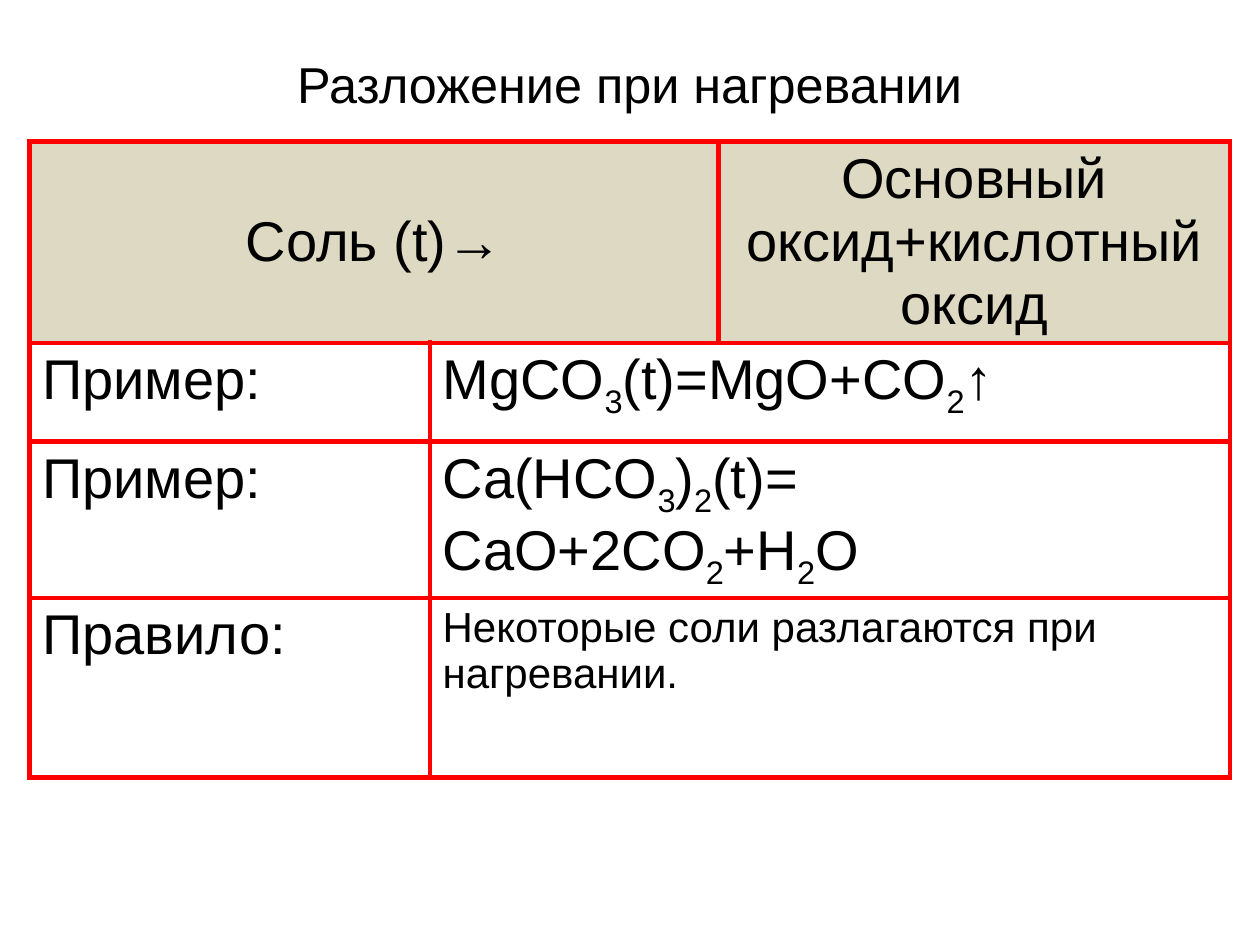
from pptx import Presentation
from pptx.dml.color import RGBColor
from pptx.enum.text import MSO_ANCHOR as Anchor, MSO_AUTO_SIZE as AutoSize, PP_ALIGN as Align
from pptx.oxml.ns import qn
from pptx.util import Pt
from lxml.etree import SubElement

BLACK, RED, BEIGE = "000000", "FF0000", "DDD9C3"
COLUMN_WIDTHS = [228.75, 165, 292.25]
ROW_HEIGHTS = [114.5, 56.5, 89.25, 102.75]
EXAMPLES = [
    ("Пример:", ["MgCO|3|(t)=MgO+CO|2|↑"], 32),
    ("Пример:", ["Ca(HCO|3|)|2|(t)=", "CaO+2CO|2|+H|2|O"], 32),
    ("Правило:", ["Некоторые соли разлагаются при нагревании."], 24),
]


def color(value):
    return RGBColor.from_string(value)


def set_format(target, values):
    for name, value in values.items():
        setattr(target, name, value)


def add_span(para, text, size, subscript=False):
    span = para.add_run()
    span.text = text
    font_name = "Times New Roman" if text == "↑" else "Arial"
    set_format(span.font, {"name": font_name, "size": Pt(size), "bold": False})
    span.font.color.rgb = color(BLACK)
    if subscript:
        span.font._element.set("baseline", "-25000")


def write_lines(frame, lines, size, align=Align.LEFT):
    for number, line in enumerate(lines):
        para = frame.add_paragraph() if number else frame.paragraphs[0]
        para.alignment = align
        for index, text in enumerate(line.split("|")):
            add_span(para, text, size, subscript=index % 2 == 1)


def add_title(page, text):
    box = page.shapes.title
    set_format(box, {"left": Pt(140.5), "top": Pt(21.5), "width": Pt(438.75), "height": Pt(52)})
    outline = SubElement(box._element.spPr, qn("a:prstGeom"), prst="roundRect")
    SubElement(outline, qn("a:avLst"))
    set_format(box.text_frame, {
        "word_wrap": True,
        "auto_size": AutoSize.NONE,
        "vertical_anchor": Anchor.MIDDLE,
    })
    write_lines(box.text_frame, [text], 28.8, Align.CENTER)


def add_borders(cell):
    properties = cell._tc.get_or_add_tcPr()
    for side in ("lnL", "lnR", "lnT", "lnB"):
        line = SubElement(properties, qn(f"a:{side}"), w=str(Pt(3)))
        fill = SubElement(line, qn("a:solidFill"))
        SubElement(fill, qn("a:srgbClr"), val=RED)


def add_grid(page):
    table = page.shapes.add_table(
        len(ROW_HEIGHTS), len(COLUMN_WIDTHS),
        Pt(17), Pt(81), Pt(sum(COLUMN_WIDTHS)), Pt(sum(ROW_HEIGHTS)),
    ).table
    set_format(table, {"first_row": False, "horz_banding": False})
    for column, width in zip(table.columns, COLUMN_WIDTHS):
        column.width = Pt(width)
    for row, height in zip(table.rows, ROW_HEIGHTS):
        row.height = Pt(height)
    for cell in table.iter_cells():
        add_borders(cell)
        cell.fill.background()
    return table


def fill_header(table):
    table.cell(0, 0).merge(table.cell(0, 1))
    for column, text in ((0, "Соль (t)→"), (2, "Основный оксид+кислотный оксид")):
        cell = table.cell(0, column)
        cell.fill.solid()
        cell.fill.fore_color.rgb = color(BEIGE)
        cell.vertical_anchor = Anchor.MIDDLE
        write_lines(cell.text_frame, [text], 32, Align.CENTER)


def fill_examples(table):
    for row, (label, lines, size) in enumerate(EXAMPLES, start=1):
        table.cell(row, 1).merge(table.cell(row, 2))
        write_lines(table.cell(row, 0).text_frame, [label], 32)
        write_lines(table.cell(row, 1).text_frame, lines, size)


def main():
    deck = Presentation()
    set_format(deck, {"slide_width": Pt(720), "slide_height": Pt(540)})
    page = deck.slides.add_slide(deck.slide_layouts[5])
    add_title(page, "Разложение при нагревании")
    table = add_grid(page)
    fill_header(table)
    fill_examples(table)
    deck.save("out.pptx")


if __name__ == "__main__":
    main()
